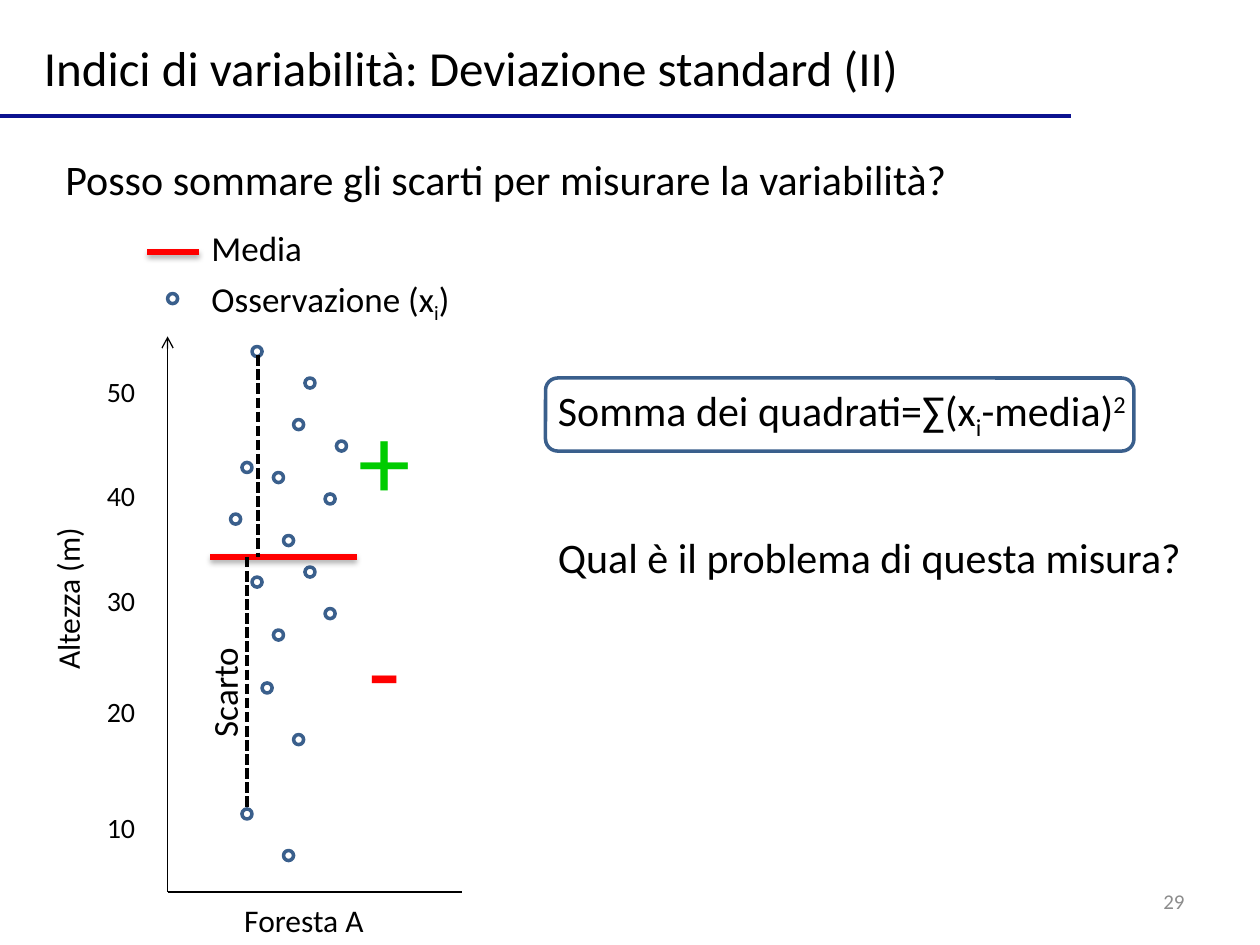
from lxml import etree
from pptx import Presentation
from pptx.dml.color import RGBColor
from pptx.enum import dml, shapes, text
from pptx.oxml import ns
from pptx.util import Inches, Pt

BLACK = RGBColor(0, 0, 0)
WHITE = RGBColor(255, 255, 255)
GREY = RGBColor(0x8C, 0x8C, 0x8C)
NAVY = RGBColor(0x0C, 0x12, 0x90)
BLUE = RGBColor(0x3A, 0x5F, 0x8C)
RED = RGBColor(255, 0, 0)
GREEN = RGBColor(0, 0xCC, 0)

MID = text.MSO_ANCHOR.MIDDLE
RIGHT = text.PP_ALIGN.RIGHT
SUB, SUP = -25000, 30000

LABELS = [
    ((7.17, 6.95, 2.33, 0.4), 12, ["29"], dict(color=GREY, anchor=MID, align=RIGHT)),
    ((0.25, 0.25, 7.01, 0.57), 28, ["Indici di variabilità: Deviazione standard (II)"],
     dict(anchor=MID, wrap=False)),
    ((0.42, 1.17, 9.25, 0.5), 24, ["Posso sommare gli scarti per misurare la variabilità?"], {}),
    ((4.33, 3, 5, 0.5), 24, ["Somma dei quadrati=∑(x", ("i", SUB), "-media)", ("2", SUP)], {}),
    ((4.33, 4.17, 5.67, 0.5), 24, ["Qual è il problema di questa misura?"], {}),
    ((1.58, 1.75, 2, 0.44), 20, ["Media"], {}),
    ((1.58, 2.15, 3.17, 0.44), 20, ["Osservazione (x", ("i", SUB), ")"], {}),
    ((-0.38, 4.3, 1.83, 0.4), 18, ["Altezza (m)"], dict(anchor=MID, turn=270)),
    ((1.84, 7.1, 1.16, 0.4), 18, ["Foresta A"], dict(wrap=False)),
    ((1.32, 5.27, 0.92, 0.44), 20, ["Scarto"], dict(wrap=False, turn=270)),
    ((2.75, 3.08, 0.33, 1.11), 60, ["+"], dict(color=GREEN)),
    ((2.83, 4.75, 0.33, 1.11), 60, ["-"], dict(color=RED)),
]
TICKS = {"10": 6.38, "20": 5.46, "30": 4.58, "40": 3.75, "50": 2.92}
DOT = 0.08
DOTS = [
    (1.92, 6.42), (2.33, 5.83), (2.17, 5), (2.58, 4.83), (2.42, 4.5), (1.83, 4.08),
    (2.25, 4.25), (2.33, 3.33), (2.17, 3.75), (2, 4.58), (2.42, 3), (2, 2.75),
    (1.92, 3.67), (2.58, 3.92), (2.67, 3.5), (2.08, 5.42), (2.25, 6.75), (1.33, 2.33),
]
MEAN = 4.42
LINES = [
    ((0, 0.92, 8.5, 0.92), NAVY, 2, {}),
    ((1.33, 7.08, 1.33, 2.67), BLACK, 0.75, dict(arrow=True)),
    ((1.33, 7.08, 3.67, 7.08), BLACK, 0.75, {}),
    ((1.67, MEAN, 2.83, MEAN), RED, 3, dict(shade=True)),
    ((1.17, 2, 1.58, 2), RED, 3, dict(shade=True)),
    ((1.96, MEAN, 1.96, 6.42), BLACK, 2, dict(dash=True)),
    ((2.05, 2.82, 2.05, MEAN), BLACK, 2, dict(dash=True)),
]

deck = Presentation()
deck.slide_width, deck.slide_height = Inches(10), Inches(7.5)
slide = deck.slides.add_slide(deck.slide_layouts[6])
tree = slide.shapes


def inches(nums):
    return [Inches(n) for n in nums]


def add(node, tag, **attrs):
    return etree.SubElement(node, ns.qn(tag), attrs)


def label(box, size, runs, color=BLACK, anchor=text.MSO_ANCHOR.TOP, align=None,
          wrap=True, turn=0):
    shape = tree.add_textbox(*inches(box))
    shape.rotation = turn
    frame = shape.text_frame
    frame.word_wrap = wrap
    frame.vertical_anchor = anchor
    para = frame.paragraphs[0]
    para.alignment = align
    for part in runs:
        words, base = part if isinstance(part, tuple) else (part, 0)
        run = para.add_run()
        run.text = words
        font = run.font
        font.name, font.size = "Calibri", Pt(size)
        font.color.rgb = color
        if base:
            font._element.set("baseline", str(base))


def line(ends, color, width, arrow=False, dash=False, shade=False):
    shape = tree.add_connector(shapes.MSO_CONNECTOR.STRAIGHT, *inches(ends))
    shape.line.color.rgb = color
    shape.line.width = Pt(width)
    if dash:
        shape.line.dash_style = dml.MSO_LINE.SQUARE_DOT
    props = shape._element.spPr
    if arrow:
        add(props.find(ns.qn("a:ln")), "a:tailEnd", type="arrow")
    effects = add(props, "a:effectLst")
    if shade:
        glow = add(effects, "a:outerShdw", blurRad=str(Pt(3.1)), dist=str(Pt(1.8)),
                   dir="5400000", rotWithShape="0")
        add(add(glow, "a:srgbClr", val="000000"), "a:alpha", val="35000")


def outline(kind, box, fill=None):
    shape = tree.add_shape(kind, *inches(box))
    shape.shadow.inherit = False
    if fill is None:
        shape.fill.background()
    else:
        shape.fill.solid()
        shape.fill.fore_color.rgb = fill
    shape.line.color.rgb = BLUE
    shape.line.width = Pt(2)


for x, y in DOTS:
    outline(shapes.MSO_SHAPE.OVAL, (x, y, DOT, DOT), WHITE)
for ends, color, width, style in LINES:
    line(ends, color, width, **style)
outline(shapes.MSO_SHAPE.ROUNDED_RECTANGLE, (4.33, 3, 4.67, 0.58))
for box, size, runs, style in LABELS:
    label(box, size, runs, **style)
for mark, top in TICKS.items():
    label((0.75, top, 0.67, 0.37), 16, [mark], anchor=MID)

deck.save("out.pptx")
